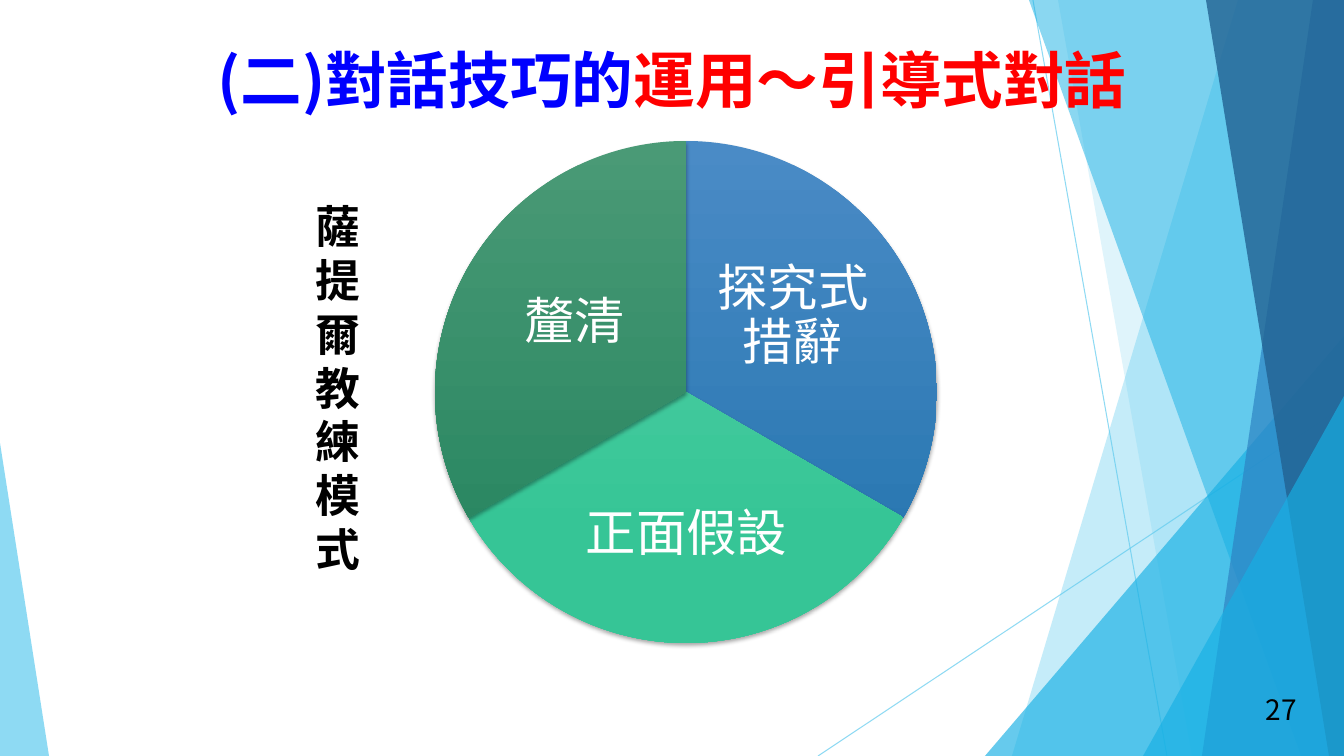
from lxml.etree import SubElement
from pptx import Presentation
from pptx.dml.color import RGBColor
from pptx.enum.shapes import MSO_CONNECTOR, MSO_SHAPE
from pptx.enum.text import MSO_ANCHOR, PP_ALIGN
from pptx.oxml.ns import qn
from pptx.util import Inches, Pt

PX = Inches(7.5) / 756
WIDE, HIGH = 1344, 756
CJK, LATIN = "Noto Sans CJK SC", "Roboto"

WHITE = RGBColor(0xFF, 0xFF, 0xFF)
BLACK = RGBColor(0, 0, 0)
BLUE = RGBColor(0, 0, 0xFF)
RED = RGBColor(0xFF, 0, 0)
SKY = RGBColor(0x5F, 0xCB, 0xEF)
CYAN = RGBColor(0x17, 0xB0, 0xE4)
STEEL = RGBColor(0x2E, 0x83, 0xC3)
NAVY = RGBColor(0x22, 0x62, 0x92)

FACETS = [
    ("band", (1238, 1012), SKY, 36),
    ("band", (1058, 1192), SKY, 20),
    ("wedge", (985, 336, 359, 420, 1), CYAN, 66),
    ("band", (1029, 1301), CYAN, 50),
    ("band", (1313, 1202), STEEL, 70),
    ("band", (1206, 1329), NAVY, 80),
    ("wedge", (1143, 396, 201, 360, 1), CYAN, 66),
    ("wedge", (0, 443, 49, 313, 0), SKY, 70),
]
RAYS = [(1033, 0, 1167, HIGH), (WIDE, 406, 818, HIGH)]
SLICES = [
    ("探究式措辭", (162, 18), (273, 93, 170, 167),
     RGBColor(0x4A, 0x8B, 0xC6), RGBColor(0x2A, 0x78, 0xB2)),
    ("正面假設", (18, 90), (138, 317, 227, 155),
     RGBColor(0x56, 0xD2, 0xA7), RGBColor(0x36, 0xC5, 0x96)),
    ("釐清", (90, 162), (55, 99, 170, 167),
     RGBColor(0x4A, 0x9A, 0x76), RGBColor(0x2A, 0x87, 0x62)),
]


def emu(*sizes):
    return [round(size * PX) for size in sizes]


def style(item, form):
    for name, value in form.items():
        setattr(item, name, value)


def fade(fill, color, part):
    fill.solid()
    fill.fore_color.rgb = color
    node = fill._xPr.find(qn("a:solidFill"))[0]
    SubElement(node, qn("a:alpha")).set("val", str(part * 1000))


def write(slide, box, runs, font, frame={}, para={}):
    text = slide.shapes.add_textbox(*emu(*box)).text_frame
    style(text, {"word_wrap": True, **frame})
    line = text.paragraphs[0]
    style(line, para)
    for words, face, color in runs:
        run = line.add_run()
        run.text = words
        style(run.font, {"name": face, **font})
        run.font.color.rgb = color
        SubElement(run._r.rPr, qn("a:ea")).set("typeface", face)


def draw_facets(slide, box):
    left, top, width, height = box
    right, base = left + width, top + height
    for x1, y1, x2, y2 in RAYS:
        ray = slide.shapes.add_connector(
            MSO_CONNECTOR.STRAIGHT,
            *emu(left + x1, top + y1, left + x2, top + y2))
        ray.line.width = Pt(0.75)
        fade(ray.line.fill, SKY, 70)
        SubElement(ray._element.spPr, qn("a:effectLst"))
    for kind, place, color, part in FACETS:
        if kind == "band":
            head, foot = place
            path = slide.shapes.build_freeform(left + head, top, scale=PX)
            path.add_line_segments(
                [(right, top), (right, base), (left + foot, base)], close=True)
            facet = path.convert_to_shape()
        else:
            x, y, w, h, peak = place
            facet = slide.shapes.add_shape(
                MSO_SHAPE.ISOSCELES_TRIANGLE, *emu(left + x, top + y, w, h))
            facet.adjustments[0] = peak
        facet.shadow.inherit = False
        facet.line.fill.background()
        fade(facet.fill, color, part)


def cast(shape):
    shape.shadow.inherit = False
    effect = shape._element.spPr.find(qn("a:effectLst"))
    shade = SubElement(effect, qn("a:outerShdw"), {
        "blurRad": str(Pt(3)), "dist": str(Pt(2)),
        "dir": "5400000", "rotWithShape": "0"})
    color = SubElement(shade, qn("a:srgbClr"), val=str(BLACK))
    SubElement(color, qn("a:alpha"), val="35000")


def draw_pie(slide, box):
    left, top = box[:2]
    inset = round(Inches(0.05))
    frame = {"vertical_anchor": MSO_ANCHOR.MIDDLE,
             **{f"margin_{side}": inset
                for side in ("left", "top", "right", "bottom")}}
    para = {"alignment": PP_ALIGN.CENTER, "line_spacing": 0.9,
            "space_after": Pt(13)}
    for words, arc, (x, y, w, h), light, dark in SLICES:
        slice_ = slide.shapes.add_shape(MSO_SHAPE.PIE, *emu(*box))
        for index, angle in enumerate(arc):
            slice_.adjustments[index] = angle
        slice_.line.fill.background()
        slice_.fill.gradient()
        slice_.fill.gradient_angle = 270
        stops = zip(slice_.fill.gradient_stops, (0, 0.78), (light, dark))
        for stop, place, color in stops:
            stop.position = place
            stop.color.rgb = color
        cast(slice_)
        write(slide, (left + x, top + y, w, h), [(words, LATIN, WHITE)],
              {"size": Pt(36)}, frame, para)


def draw_title(slide, box):
    runs = [("(二)對話技巧的", CJK, BLUE),
            ("運用〜", CJK, RED),
            ("引導式對話", LATIN, RED)]
    write(slide, box, runs, {"size": Pt(44), "bold": True},
          para={"alignment": PP_ALIGN.CENTER})


def draw_side(slide, box):
    write(slide, box, [("薩提爾教練模式", LATIN, BLACK)],
          {"size": Pt(32), "bold": True})


def draw_page(slide, box):
    write(slide, box, [("27", CJK, BLACK)], {"size": Pt(20)},
          {"vertical_anchor": MSO_ANCHOR.MIDDLE})


def main():
    deck = Presentation()
    width, height = emu(WIDE, HIGH)
    style(deck, {"slide_width": width, "slide_height": height})
    slide = deck.slides.add_slide(deck.slide_layouts[6])
    draw_facets(slide, (0, 0, WIDE, HIGH))
    draw_title(slide, (0, 37, WIDE, 85))
    draw_pie(slide, (435, 141, 502, 502))
    draw_page(slide, (1256, 684, 70, 50))
    draw_side(slide, (306, 194, 62, 390))
    deck.save("out.pptx")


if __name__ == "__main__":
    main()
